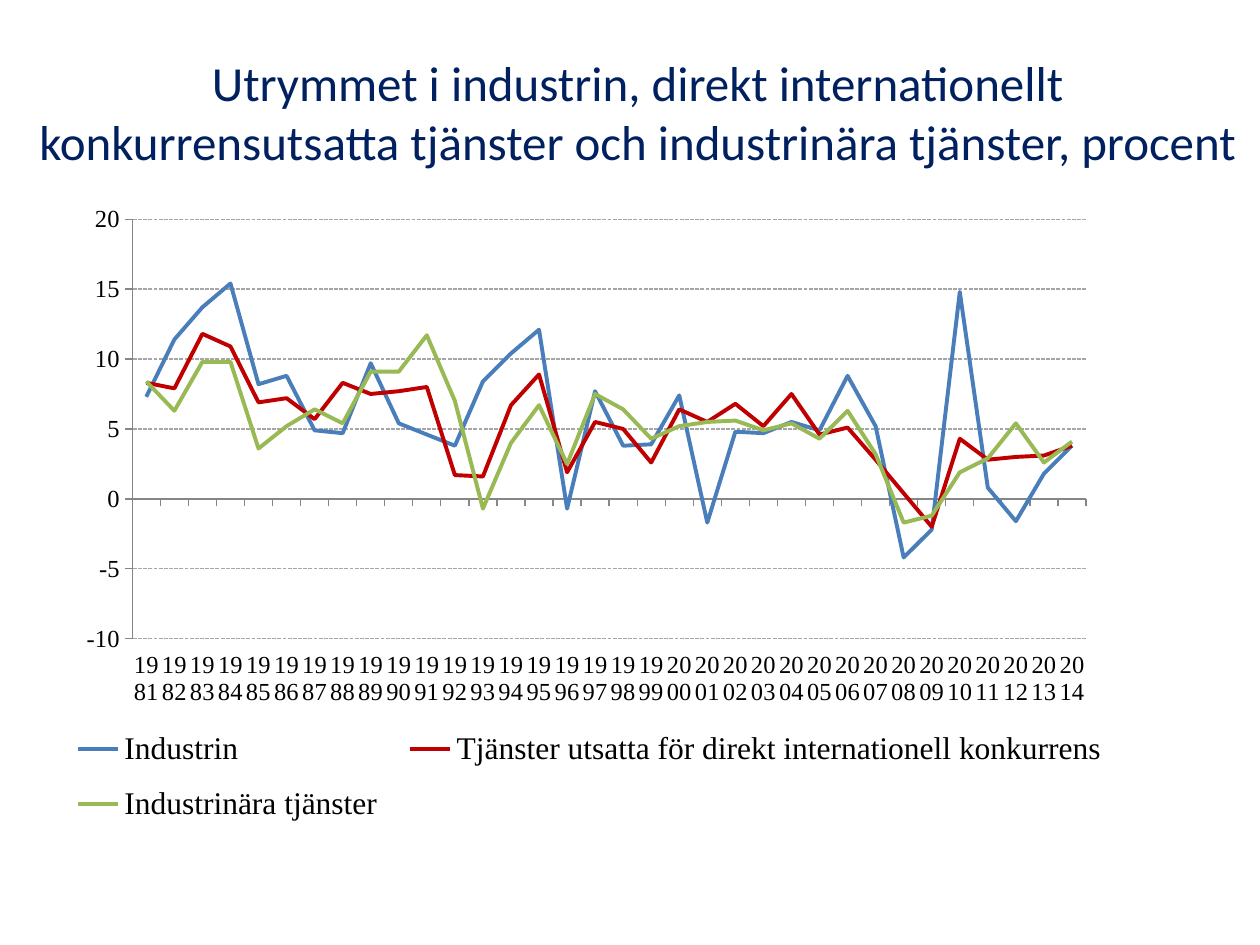
from dataclasses import dataclass

from lxml import etree
from pptx import Presentation
from pptx.chart.data import CategoryChartData
from pptx.dml.color import RGBColor
from pptx.enum.chart import (XL_CHART_TYPE, XL_LEGEND_POSITION, XL_MARKER_STYLE,
                             XL_TICK_LABEL_POSITION, XL_TICK_MARK)
from pptx.enum.dml import MSO_LINE
from pptx.enum.text import MSO_ANCHOR, PP_ALIGN
from pptx.oxml.ns import qn
from pptx.util import Inches, Pt

LINE_CHART = XL_CHART_TYPE.LINE
BOTTOM = XL_LEGEND_POSITION.BOTTOM
NO_MARKER = XL_MARKER_STYLE.NONE
LABELS_LOW = XL_TICK_LABEL_POSITION.LOW
TICK_OUTSIDE = XL_TICK_MARK.OUTSIDE
TICK_NONE = XL_TICK_MARK.NONE
SHORT_DASH = MSO_LINE.SQUARE_DOT
MIDDLE = MSO_ANCHOR.MIDDLE
CENTER = PP_ALIGN.CENTER

NAVY = RGBColor(0x00, 0x20, 0x60)
BLACK = RGBColor(0x00, 0x00, 0x00)
AXIS_GRAY = RGBColor(0x86, 0x86, 0x86)
GRID_GRAY = RGBColor(0xA6, 0xA6, 0xA6)
BLUE = RGBColor(0x4A, 0x7E, 0xBB)
RED = RGBColor(0xC0, 0x00, 0x00)
GREEN = RGBColor(0x98, 0xB9, 0x54)

TITLE = ("Utrymmet i industrin, direkt internationellt "
         "konkurrensutsatta tjänster och industrinära tjänster, procent")
CHART_FONT = "Times New Roman"
YEARS = range(1981, 2015)


@dataclass
class Box:
    left: float
    top: float
    width: float
    height: float


@dataclass
class Sector:
    name: str
    color: RGBColor
    values: list[float]


# Places on the slide, in inches
TITLE_BOX = Box(0.12, 0.3, 9.88, 1.17)
CHART_BOX = Box(0.43, 1.39, 8.5, 5.43)
PLOT_BOX = Box(1.05, 1.74, 7.57, 3.33)
LEGEND_BOX = Box(0.44, 5.65, 8.48, 1.03)

SECTORS = [
    Sector("Industrin", BLUE, [
        7.3, 11.4, 13.7, 15.4, 8.2, 8.8, 4.9, 4.7, 9.7, 5.4, 4.6, 3.8, 8.4, 10.4, 12.1, -0.7, 7.7,
        3.8, 3.9, 7.4, -1.7, 4.8, 4.7, 5.5, 4.9, 8.8, 5.2, -4.2, -2.2, 14.8, 0.8, -1.6, 1.8, 3.8]),
    Sector("Tjänster utsatta för direkt internationell konkurrens", RED, [
        8.3, 7.9, 11.8, 10.9, 6.9, 7.2, 5.7, 8.3, 7.5, 7.7, 8, 1.7, 1.6, 6.7, 8.9, 1.9, 5.5,
        5, 2.6, 6.4, 5.5, 6.8, 5.2, 7.5, 4.6, 5.1, 2.8, 0.4, -2, 4.3, 2.8, 3, 3.1, 3.8]),
    Sector("Industrinära tjänster", GREEN, [
        8.4, 6.3, 9.8, 9.8, 3.6, 5.2, 6.4, 5.4, 9.1, 9.1, 11.7, 7, -0.7, 4, 6.7, 2.5, 7.5,
        6.4, 4.3, 5.2, 5.5, 5.6, 4.9, 5.4, 4.3, 6.3, 3.2, -1.7, -1.2, 1.9, 2.9, 5.4, 2.6, 4.1]),
]


def inches(box: Box) -> list[int]:
    return [Inches(length) for length in (box.left, box.top, box.width, box.height)]


def set_font(font, name: str, size: int, color: RGBColor) -> None:
    font.name = name
    font.size = Pt(size)
    font.color.rgb = color


def set_layout(parent, index: int, box: Box, settings: dict) -> None:
    """Place a chart part, turning its box into fractions of the chart."""
    for old_layout in parent.findall(qn("c:layout")):
        parent.remove(old_layout)
    settings = settings | {
        "xMode": "edge", "yMode": "edge",
        "x": (box.left - CHART_BOX.left) / CHART_BOX.width,
        "y": (box.top - CHART_BOX.top) / CHART_BOX.height,
        "w": box.width / CHART_BOX.width,
        "h": box.height / CHART_BOX.height}
    layout = etree.Element(qn("c:layout"))
    manual = etree.SubElement(layout, qn("c:manualLayout"))
    for tag, value in settings.items():
        etree.SubElement(manual, qn(f"c:{tag}")).set("val", str(value))
    parent.insert(index, layout)


def style_axis(axis) -> None:
    axis.major_tick_mark = TICK_OUTSIDE
    axis.minor_tick_mark = TICK_NONE
    axis.format.line.color.rgb = AXIS_GRAY
    axis.format.line.width = Pt(0.75)
    set_font(axis.tick_labels.font, CHART_FONT, 14, BLACK)


def show_every_label(axis_element) -> None:
    """Keep the year labels upright, with none skipped."""
    body = axis_element.find(f"{qn('c:txPr')}/{qn('a:bodyPr')}")
    body.set("rot", "0")
    body.set("vert", "horz")
    skip = etree.Element(qn("c:tickLblSkip"))
    skip.set("val", "1")
    axis_element.find(qn("c:noMultiLvlLbl")).addprevious(skip)


def add_title(slide) -> None:
    shape = slide.shapes.add_textbox(*inches(TITLE_BOX))
    shape.text_frame.word_wrap = True
    shape.text_frame.vertical_anchor = MIDDLE
    paragraph = shape.text_frame.paragraphs[0]
    paragraph.text = TITLE
    paragraph.alignment = CENTER
    set_font(paragraph.font, "Calibri", 28, NAVY)


def add_sector_chart(slide) -> None:
    data = CategoryChartData()
    data.categories = [str(year) for year in YEARS]
    for sector in SECTORS:
        data.add_series(sector.name, sector.values)
    chart = slide.shapes.add_chart(LINE_CHART, *inches(CHART_BOX), data).chart
    chart.has_title = False
    set_font(chart.font, CHART_FONT, 14, BLACK)

    # Series
    plot = chart.plots[0]
    plot.vary_by_categories = False
    for series, sector in zip(plot.series, SECTORS):
        series.smooth = False
        series.marker.style = NO_MARKER
        series.format.line.color.rgb = sector.color
        series.format.line.width = Pt(2.25)

    # Axes and gridlines
    style_axis(chart.category_axis)
    chart.category_axis.tick_label_position = LABELS_LOW
    show_every_label(chart.element.find(f".//{qn('c:catAx')}"))
    value_axis = chart.value_axis
    style_axis(value_axis)
    value_axis.minimum_scale, value_axis.maximum_scale = -10, 20
    value_axis.major_unit = 5
    value_axis.has_major_gridlines = True
    grid_line = value_axis.major_gridlines.format.line
    grid_line.color.rgb = GRID_GRAY
    grid_line.width = Pt(0.75)
    grid_line.dash_style = SHORT_DASH

    # Legend
    chart.has_legend = True
    legend = chart.legend
    legend.position = BOTTOM
    legend.include_in_layout = False
    set_font(legend.font, CHART_FONT, 18, BLACK)

    # Positions inside the chart
    plot_area = chart.element.find(f".//{qn('c:plotArea')}")
    set_layout(plot_area, 0, PLOT_BOX, {"layoutTarget": "inner"})
    legend_element = chart.element.find(f".//{qn('c:legend')}")
    set_layout(legend_element, 1, LEGEND_BOX, {})


def main() -> None:
    presentation = Presentation()
    presentation.slide_width = Inches(10)
    presentation.slide_height = Inches(7.5)
    slide = presentation.slides.add_slide(presentation.slide_layouts[6])
    add_title(slide)
    add_sector_chart(slide)
    presentation.save("out.pptx")


if __name__ == "__main__":
    main()
